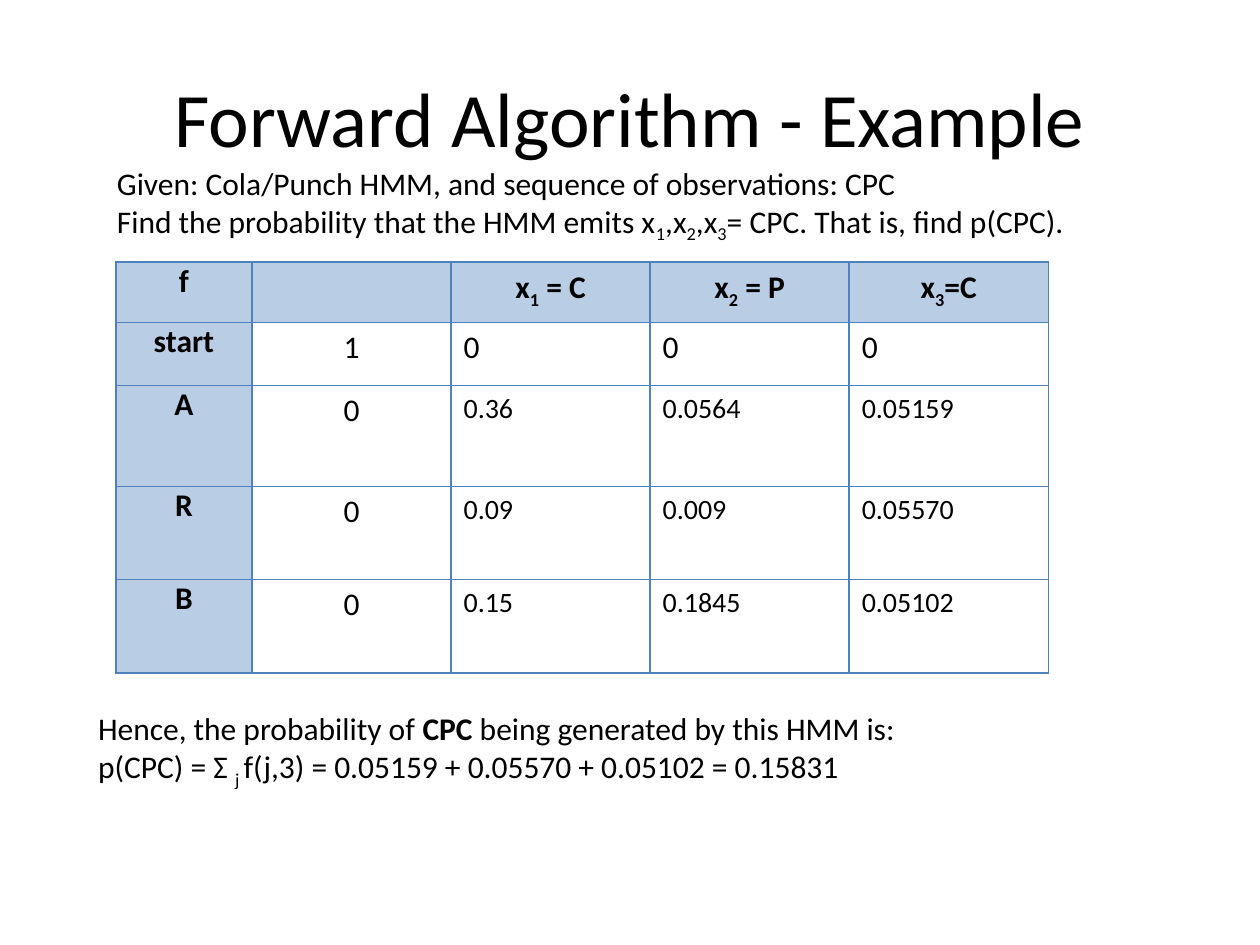
from pptx import Presentation
from pptx.dml.color import RGBColor
from pptx.enum.text import MSO_ANCHOR, MSO_AUTO_SIZE, PP_ALIGN
from pptx.oxml import parse_xml
from pptx.oxml.ns import nsdecls
from pptx.util import Pt

PX = 9144
BLACK, WHITE, HEAD, BORDER = "000000", "FFFFFF", "B9CDE5", "4F81BD"
COLUMNS = [108, 158, 158, 158, 158]
ROWS = [48, 50, 80, 74, 74]
HEADER = [
    ["f"],
    [],
    ["x", ("1", "sub"), " = C"],
    ["x", ("2", "sub"), " = P"],
    ["x", ("3", "sub"), "=C"],
]
STATES = [
    ("start", "1", "0", "0", "0"),
    ("A", "0", "0.36", "0.0564", "0.05159"),
    ("R", "0", "0.09", "0.009", "0.05570"),
    ("B", "0", "0.15", "0.1845", "0.05102"),
]
PROBLEM = [
    ["Given: Cola/Punch HMM, and sequence of observations: CPC"],
    ["Find the probability that the HMM emits x", ("1", "sub"), ",x", ("2", "sub"),
     ",x", ("3", "sub"), "= CPC. That is, find p(CPC)."],
]
RESULT = [
    ["Hence, the probability of ", ("CPC", "bold"), " being generated by this HMM is:"],
    ["p(CPC) = Σ ", ("j ", "sub"), "f(j,3) = 0.05159 + 0.05570 + 0.05102 = 0.15831"],
]


def px(*lengths):
    """Turn whole px into EMU."""
    return [n * PX for n in lengths]


def color(hex_value):
    """Return the colour of a hex string."""
    return RGBColor.from_string(hex_value)


def set_attrs(target, values):
    """Set each named attribute on the target."""
    for name, value in values.items():
        setattr(target, name, value)


def write(p, parts, size=18, bold=False, align=PP_ALIGN.LEFT):
    """Fill a paragraph with plain, bold or subscript runs."""
    p.alignment = align
    for part in parts:
        text, style = (part, "") if isinstance(part, str) else part
        r = p.add_run()
        r.text = text
        set_attrs(r.font, {"name": "Calibri", "size": Pt(size), "bold": bold or style == "bold"})
        r.font.color.rgb = color(BLACK)
        if style == "sub":
            r._r.get_or_add_rPr().set("baseline", "-25000")


def add_title(s, box, text):
    """Place and fill the title placeholder."""
    sp = s.shapes.title
    set_attrs(sp, dict(zip(("left", "top", "width", "height"), px(*box))))
    sp.text_frame.vertical_anchor = MSO_ANCHOR.MIDDLE
    write(sp.text_frame.paragraphs[0], [text], size=44, align=PP_ALIGN.CENTER)


def add_text(s, box, lines, wrap=True):
    """Add a text box with one paragraph per line."""
    tf = s.shapes.add_textbox(*px(*box)).text_frame
    set_attrs(tf, {"word_wrap": wrap, "auto_size": MSO_AUTO_SIZE.SHAPE_TO_FIT_TEXT})
    for i, parts in enumerate(lines):
        write(tf.add_paragraph() if i else tf.paragraphs[0], parts)


def style_cell(cell, fill):
    """Give a cell its borders and fill."""
    tcPr = cell._tc.get_or_add_tcPr()
    for side in "LRTB":
        tcPr.append(parse_xml(
            f'<a:ln{side} {nsdecls("a")} w="12700"><a:solidFill>'
            f'<a:srgbClr val="{BORDER}"/></a:solidFill></a:ln{side}>'))
    cell.fill.solid()
    cell.fill.fore_color.rgb = color(fill)


def add_forward_table(s, left, top):
    """Add the table of forward probabilities."""
    rows = [HEADER] + [[[value] for value in state] for state in STATES]
    box = px(left, top, sum(COLUMNS), sum(ROWS))
    table = s.shapes.add_table(len(ROWS), len(COLUMNS), *box).table
    for column, width in zip(table.columns, px(*COLUMNS)):
        column.width = width
    for row, height in zip(table.rows, px(*ROWS)):
        row.height = height
    for i, row in enumerate(rows):
        for j, parts in enumerate(row):
            cell = table.cell(i, j)
            is_head = i == 0 or j == 0
            style_cell(cell, HEAD if is_head else WHITE)
            if j == 0:
                set_attrs(cell, {f"margin_{side}": 0 for side in ("left", "right", "top", "bottom")})
            write(cell.text_frame.paragraphs[0], parts,
                  size=16 if i > 1 and j > 1 else 18, bold=is_head,
                  align=PP_ALIGN.CENTER if is_head or j == 1 else PP_ALIGN.LEFT)


def main():
    """Build and save the slide."""
    prs = Presentation()
    set_attrs(prs, dict(zip(("slide_width", "slide_height"), px(1000, 750))))
    s = prs.slides.add_slide(prs.slide_layouts[5])
    add_title(s, (50, 30, 900, 125), "Forward Algorithm - Example")
    add_forward_table(s, 92, 208)
    add_text(s, (68, 558, 807, 101), RESULT)
    add_text(s, (83, 125, 790, 71), PROBLEM, wrap=False)
    prs.save("out.pptx")


if __name__ == "__main__":
    main()
